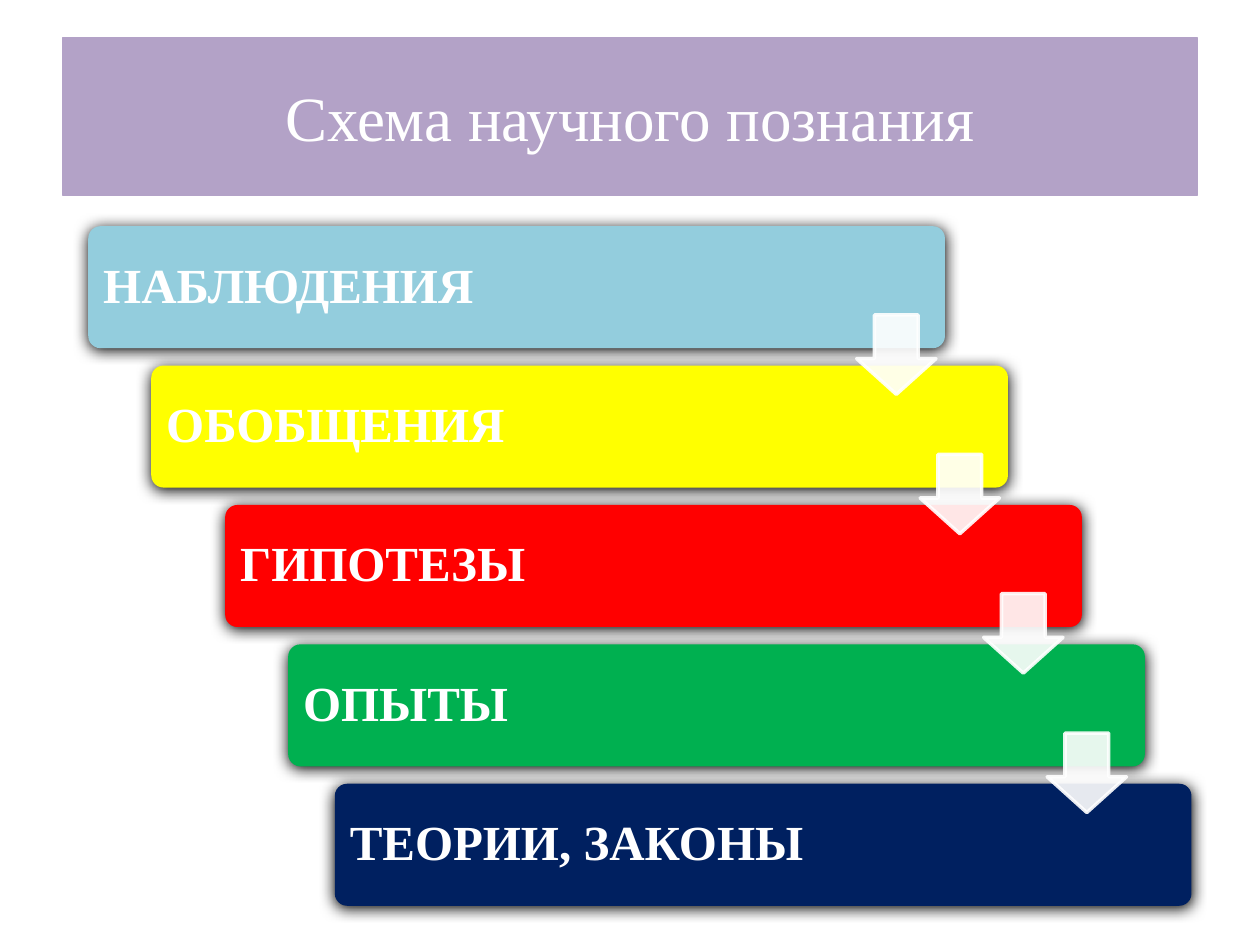
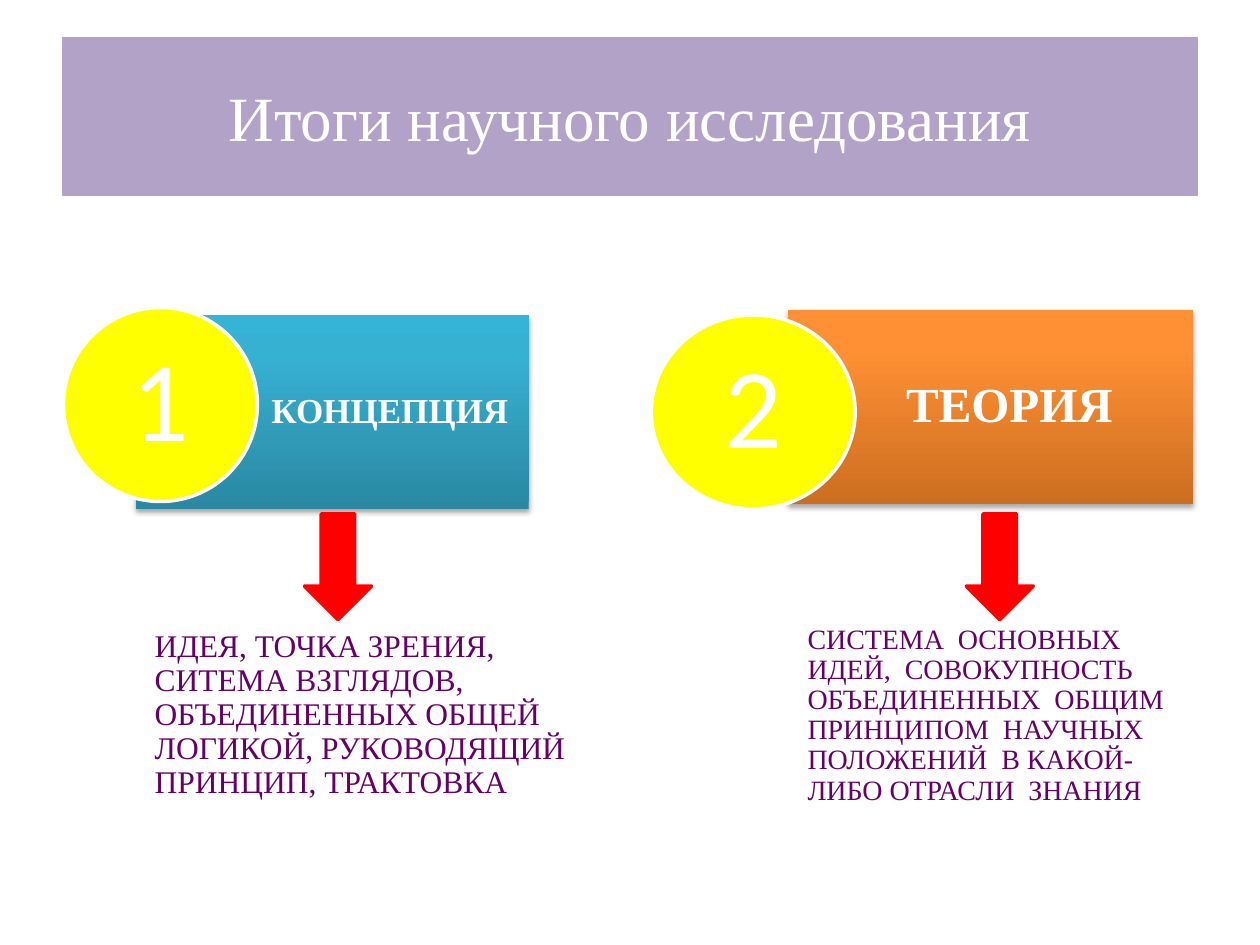
from copy import deepcopy

from pptx import Presentation
from pptx.dml.color import RGBColor
from pptx.enum.shapes import MSO_SHAPE
from pptx.enum.text import MSO_ANCHOR, PP_ALIGN
from pptx.oxml import parse_xml
from pptx.oxml.ns import nsdecls, qn
from pptx.util import Cm, Pt

WHITE = RGBColor(0xFF, 0xFF, 0xFF)
LILAC = RGBColor(0xB3, 0xA2, 0xC7)
SKY = RGBColor(0x93, 0xCD, 0xDD)
YELLOW = RGBColor(0xFF, 0xFF, 0x00)
RED = RGBColor(0xFF, 0x00, 0x00)
GREEN = RGBColor(0x00, 0xB0, 0x50)
NAVY = RGBColor(0x00, 0x20, 0x60)
PLUM = RGBColor(0x66, 0x00, 0x66)
TEALS = [RGBColor(0x2A, 0x88, 0xA2), RGBColor(0x37, 0xB1, 0xD2), RGBColor(0x34, 0xB4, 0xD6)]
AMBERS = [RGBColor(0xCC, 0x6E, 0x20), RGBColor(0xFF, 0x90, 0x34), RGBColor(0xFF, 0x91, 0x36)]
SERIF = "Times New Roman"


def draw(slide, kind, place, fill, line=None, shadow=None):
    """Add a shape; place is in cm, shadow is (blur pt, distance pt, opacity %)."""
    shape = slide.shapes.add_shape(kind, *map(Cm, place))
    shape.shadow.inherit = False
    shape.fill.solid()
    shape.fill.fore_color.rgb = fill
    if line is None:
        shape.line.fill.background()
    else:
        shape.line.color.rgb = line
        shape.line.width = Pt(2)
    if shadow:
        blur, dist, alpha = shadow
        shape._element.spPr.find(qn("a:effectLst")).append(parse_xml(
            f'<a:outerShdw {nsdecls("a")} blurRad="{Pt(blur)}" dist="{Pt(dist)}"'
            f' dir="5400000" rotWithShape="0"><a:srgbClr val="000000">'
            f'<a:alpha val="{alpha * 1000}"/></a:srgbClr></a:outerShdw>'))
    return shape


def write(shape, text, size, inset, color=WHITE, align=PP_ALIGN.LEFT,
          bold=False, font=SERIF, left=None):
    """Put one paragraph in a shape; the insets are in cm."""
    frame = shape.text_frame
    frame.word_wrap = True
    frame.vertical_anchor = MSO_ANCHOR.MIDDLE
    frame.margin_left = Cm(inset if left is None else left)
    frame.margin_top = frame.margin_right = frame.margin_bottom = Cm(inset)
    para = frame.paragraphs[0]
    para.text = text
    para.alignment = align
    para.line_spacing = 0.9
    para.font.name = font
    para.font.size = Pt(size)
    para.font.bold = bold
    para.font.color.rgb = color


deck = Presentation()
deck.slide_width, deck.slide_height = Cm(25.4), Cm(19.05)

# Slides with their title bands
slides = []
for name in ("Схема научного познания", "Итоги научного исследования"):
    slide = deck.slides.add_slide(deck.slide_layouts[5])
    band = slide.shapes.title
    band.left, band.top, band.width, band.height = Cm(1.27), Cm(0.76), Cm(22.86), Cm(3.18)
    band.fill.solid()
    band.fill.fore_color.rgb = LILAC
    band.line.color.rgb = LILAC
    band.line.width = Pt(0.75)
    band.text_frame.vertical_anchor = MSO_ANCHOR.MIDDLE
    para = band.text_frame.paragraphs[0]
    para.text = name
    para.alignment = PP_ALIGN.CENTER
    para.font.name = SERIF
    para.font.size = Pt(36)
    para.font.color.rgb = WHITE
    slides.append(slide)
scheme, results = slides

# Scheme: staircase of steps
STEP = 2.81
steps = [
    ("НАБЛЮДЕНИЯ", 1.78, SKY),
    ("ОБОБЩЕНИЯ", 3.05, YELLOW),
    ("ГИПОТЕЗЫ", 4.54, RED),
    ("ОПЫТЫ", 5.81, GREEN),
    ("ТЕОРИИ, ЗАКОНЫ", 6.75, NAVY),
]
for row, (text, left, color) in enumerate(steps):
    bar = draw(scheme, MSO_SHAPE.ROUNDED_RECTANGLE,
               (left, 4.56 + row * STEP, 17.27, 2.46), color, shadow=(8.5, 1, 100))
    bar.adjustments[0] = 0.1
    write(bar, text, 28, 0.23, bold=True)

# Scheme: translucent arrows between the steps
for row in range(len(steps) - 1):
    arrow = draw(scheme, MSO_SHAPE.DOWN_ARROW,
                 (17.27 + row * 1.28, 6.35 + row * STEP, 1.6, 1.6), WHITE, WHITE)
    arrow.adjustments[0] = 0.55
    arrow.adjustments[1] = 0.45
    for tone in arrow._element.spPr.iter(qn("a:srgbClr")):
        tone.append(parse_xml(f'<a:alpha {nsdecls("a")} val="90000"/>'))

# Results: card, definition, numbered disc and arrow for each
TALL = 3.91
cards = [
    dict(card=(2.74, 6.35, 7.92, TALL), tones=TEALS, name="КОНЦЕПЦИЯ", size=20,
         pad=0.41, left=1.27, align=PP_ALIGN.RIGHT,
         note=(3.12, 12.47, 9.7, TALL), small=18, inset=0.36,
         text="ИДЕЯ, ТОЧКА ЗРЕНИЯ, СИТЕМА ВЗГЛЯДОВ, ОБЪЕДИНЕННЫХ ОБЩЕЙ "
              "ЛОГИКОЙ, РУКОВОДЯЩИЙ ПРИНЦИП, ТРАКТОВКА",
         disc=(1.28, 6.2, 3.91, TALL), arrow=6.14),
    dict(card=(15.88, 6.25, 8.18, TALL), tones=AMBERS, name="ТЕОРИЯ", size=28,
         pad=0.56, left=1.32, align=PP_ALIGN.CENTER,
         note=(16.28, 12.47, 7.7, TALL), small=16, inset=0.3,
         text="СИСТЕМА  ОСНОВНЫХ ИДЕЙ,  СОВОКУПНОСТЬ ОБЪЕДИНЕННЫХ  ОБЩИМ "
              "ПРИНЦИПОМ  НАУЧНЫХ ПОЛОЖЕНИЙ  В КАКОЙ-ЛИБО ОТРАСЛИ  ЗНАНИЯ",
         disc=(13.13, 6.35, 4.11, TALL), arrow=19.48),
]
for num, item in enumerate(cards, 1):
    card = draw(results, MSO_SHAPE.RECTANGLE, item["card"], WHITE, shadow=(3.1, 1.8, 35))
    card.fill.gradient()
    card.fill.gradient_angle = 90
    last = list(card._element.spPr.iter(qn("a:gs")))[-1]
    last.addprevious(deepcopy(last))
    for stop, place, tone in zip(card.fill.gradient_stops, (0, 0.8, 1), item["tones"]):
        stop.position = place
        stop.color.rgb = tone
    write(card, item["name"], item["size"], item["pad"], align=item["align"],
          bold=True, left=item["left"])

    note = results.shapes.add_textbox(*map(Cm, item["note"]))
    write(note, item["text"], item["small"], item["inset"], PLUM, left=0)

    disc = draw(results, MSO_SHAPE.OVAL, item["disc"], YELLOW, WHITE)
    write(disc, str(num), 65, 0, align=PP_ALIGN.CENTER, font="Calibri")

    draw(results, MSO_SHAPE.DOWN_ARROW, (item["arrow"], 10.36, 1.35, 2.13), RED, RED)

deck.save("out.pptx")
